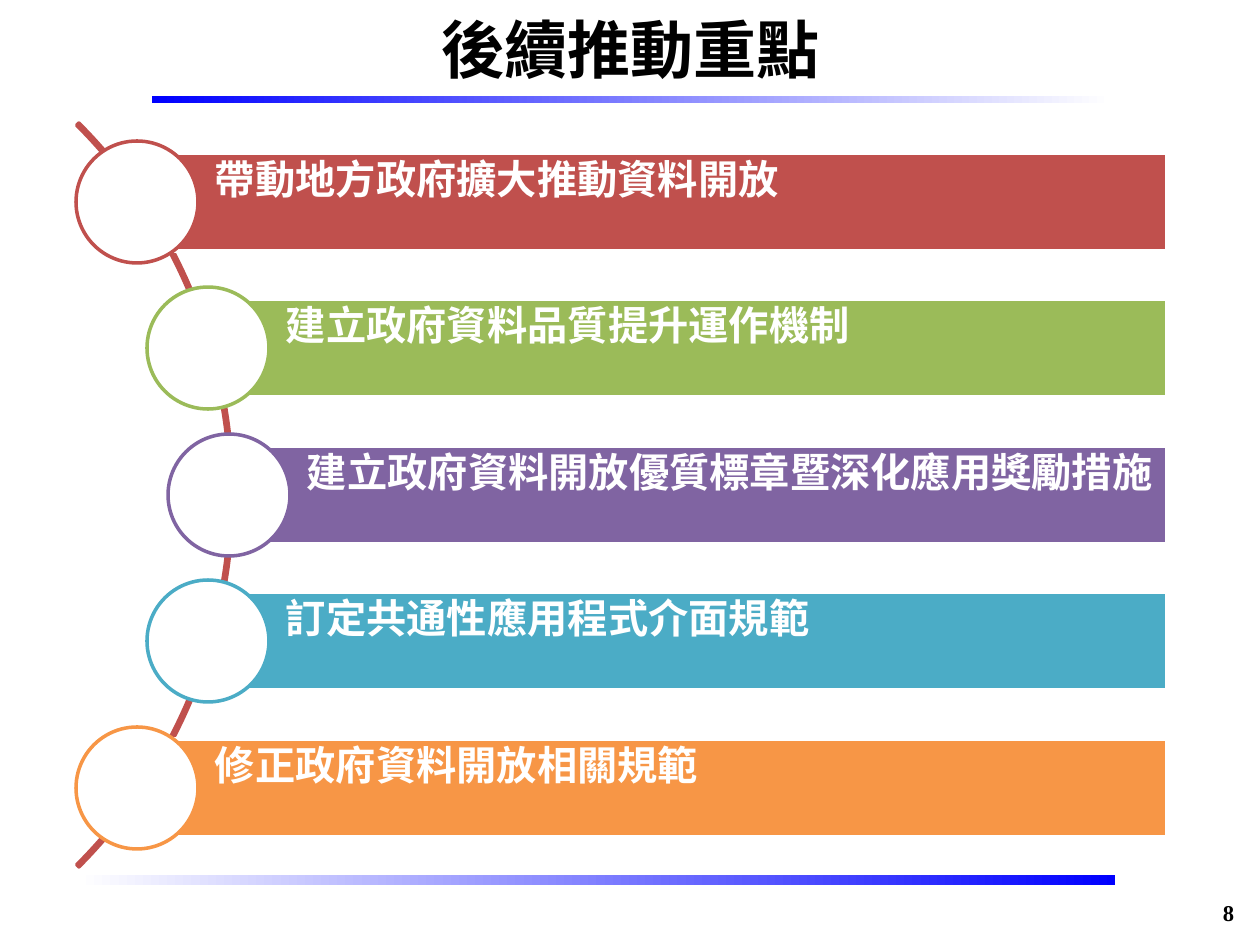
from lxml.etree import SubElement
from pptx import Presentation
from pptx.dml.color import RGBColor
from pptx.enum.shapes import MSO_SHAPE
from pptx.enum.text import MSO_ANCHOR, PP_ALIGN
from pptx.oxml.ns import qn
from pptx.util import Emu, Pt

EMU_PER_PX = 914400 / 126
CJK_FONT = "Noto Sans CJK SC"
BAR_TOP, BAR_HEIGHT, BAR_RIGHT = 153, 98, 1167
CIRCLE_SIZE = 122
ITEMS = [
    ("帶動地方政府擴大推動資料開放", 137, "C0504D"),
    ("建立政府資料品質提升運作機制", 208, "9BBB59"),
    ("建立政府資料開放優質標章暨深化應用獎勵措施", 229, "8064A2"),
    ("訂定共通性應用程式介面規範", 208, "4BACC6"),
    ("修正政府資料開放相關規範", 137, "F79646"),
]


def px(length):
    """Turn pixels into EMU."""
    return Emu(round(length * EMU_PER_PX))


def color(value):
    """Turn a hex string into a colour."""
    return RGBColor.from_string(value)


def add_shape(page, kind, box, fill=None, line=None):
    """Add a flat preset shape with an optional fill and 2 pt outline."""
    shape = page.shapes.add_shape(kind, *map(px, box))
    shape.shadow.inherit = False
    if fill:
        shape.fill.solid()
        shape.fill.fore_color.rgb = color(fill)
    else:
        shape.fill.background()
    if line:
        shape.line.color.rgb = color(line)
        shape.line.width = Pt(2)
    else:
        shape.line.fill.background()
    return shape


def add_rule(page, box, start, end):
    """Add a thin bar that fades from left to right."""
    rule = add_shape(page, MSO_SHAPE.RECTANGLE, box)
    rule.fill.gradient()
    rule.fill.gradient_angle = 0
    for stop, value, position in zip(rule.fill.gradient_stops, (start, end), (0, 1)):
        stop.color.rgb = color(value)
        stop.position = position


def write_text(shape, text, size, ink="000000", font=CJK_FONT, align=PP_ALIGN.LEFT,
               anchor=MSO_ANCHOR.TOP, insets=(13, 6, 13, 6), spacing=1.0):
    """Write one bold line of text into a shape."""
    frame = shape.text_frame
    frame.word_wrap = True
    frame.vertical_anchor = anchor
    (frame.margin_left, frame.margin_top,
     frame.margin_right, frame.margin_bottom) = map(px, insets)
    para = frame.paragraphs[0]
    para.alignment = align
    para.line_spacing = spacing
    span = para.add_run()
    span.text = text
    span.font.size = Pt(size)
    span.font.bold = True
    span.font.color.rgb = color(ink)
    span.font.name = font
    SubElement(span.font._element, qn("a:ea"), typeface=font)


def add_item(page, index, text, left, accent):
    """Add one coloured bar with its label and circle."""
    top = BAR_TOP + index * 293 // 2
    bar = add_shape(page, MSO_SHAPE.RECTANGLE,
                    (left, top, BAR_RIGHT - left, BAR_HEIGHT), accent, "FFFFFF")
    write_text(bar, text, 23, ink="FFFFFF", insets=(78, 7, 7, 7), spacing=0.9)
    circle_top = top + (BAR_HEIGHT - CIRCLE_SIZE) // 2
    add_shape(page, MSO_SHAPE.OVAL,
              (left - CIRCLE_SIZE // 2, circle_top, CIRCLE_SIZE, CIRCLE_SIZE),
              "FFFFFF", accent)


def add_arc(page):
    """Add the thin arc that runs behind the circles."""
    arc = add_shape(page, MSO_SHAPE.BLOCK_ARC, (-819, -31, 1052, 1052), line="C0504D")
    for index, value in enumerate((189, 27, 0.003)):
        arc.adjustments[index] = value


def main():
    """Build the slide and save it."""
    deck = Presentation()
    deck.slide_width, deck.slide_height = px(1260), px(945)
    page = deck.slides.add_slide(deck.slide_layouts[6])
    add_rule(page, (78, 875, 1037, 10), "FFFFFF", "0000FF")
    add_rule(page, (152, 96, 960, 7), "0000FF", "FFFFFF")
    title = page.shapes.add_textbox(*map(px, (64, 4, 1134, 89)))
    write_text(title, "後續推動重點", 36, align=PP_ALIGN.CENTER, anchor=MSO_ANCHOR.MIDDLE)
    add_arc(page)
    for index, item in enumerate(ITEMS):
        add_item(page, index, *item)
    number = page.shapes.add_textbox(*map(px, (1150, 893, 97, 30)))
    write_text(number, "8", 12.9, font="Times New Roman", align=PP_ALIGN.RIGHT)
    deck.save("out.pptx")


if __name__ == "__main__":
    main()
